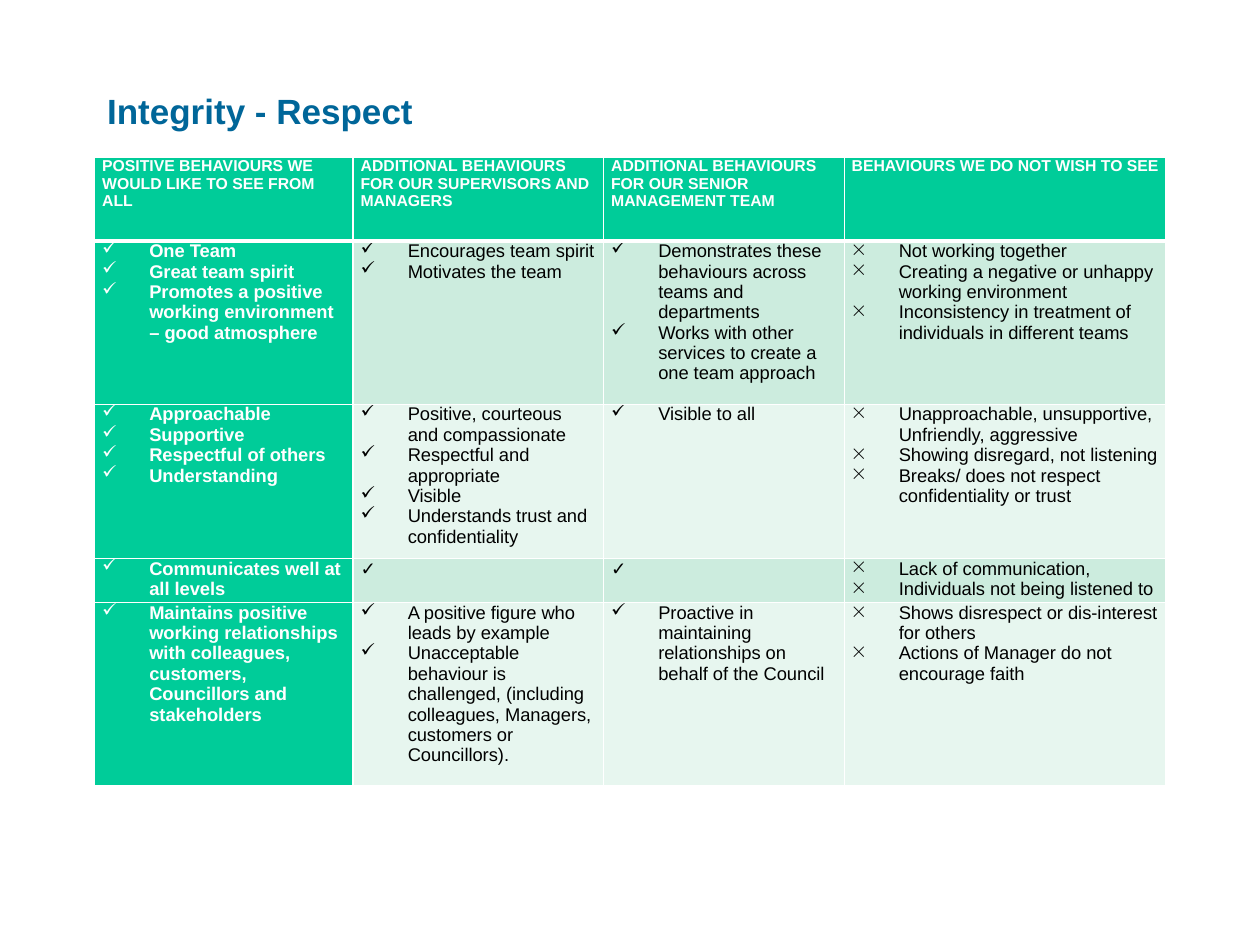
from lxml import etree
from pptx import Presentation
from pptx.dml.color import RGBColor
from pptx.enum.text import MSO_ANCHOR
from pptx.oxml.ns import qn
from pptx.util import Cm, Pt

MIDDLE = MSO_ANCHOR.MIDDLE
BLUE = RGBColor(0x00, 0x66, 0x99)
GREEN = RGBColor(0x00, 0xCC, 0x99)
MINT = RGBColor(0xCC, 0xEC, 0xDE)
PALE_MINT = RGBColor(0xE7, 0xF6, 0xEF)
WHITE = RGBColor(0xFF, 0xFF, 0xFF)
BLACK = RGBColor(0x00, 0x00, 0x00)

TICK, CROSS = "✓", "×"
COLUMN_BULLETS = [TICK, TICK, TICK, CROSS]
COLUMN_WIDTHS = [5.21, 5.05, 4.85, 6.48]
ROW_HEIGHTS = [1.69, 3.29, 2.98, 0.88, 3.7]
HEADINGS = [
    "POSITIVE BEHAVIOURS WE WOULD LIKE TO SEE FROM ALL",
    "ADDITIONAL BEHAVIOURS FOR OUR SUPERVISORS AND MANAGERS",
    "ADDITIONAL BEHAVIOURS FOR OUR SENIOR MANAGEMENT TEAM",
    "BEHAVIOURS WE DO NOT WISH TO SEE",
]
BEHAVIOURS = [
    [
        ["One Team", "Great team spirit",
         "Promotes a positive working environment – good atmosphere"],
        ["Encourages team spirit", "Motivates the team"],
        ["Demonstrates these behaviours across teams and departments",
         "Works with other services to create a one team approach"],
        ["Not working together",
         "Creating a negative or unhappy working environment",
         "Inconsistency in treatment of individuals in different teams"],
    ],
    [
        ["Approachable", "Supportive", "Respectful of others", "Understanding"],
        ["Positive, courteous and compassionate", "Respectful and appropriate",
         "Visible", "Understands trust and confidentiality"],
        ["Visible to all"],
        ["Unapproachable, unsupportive, Unfriendly, aggressive",
         "Showing disregard, not listening",
         "Breaks/ does not respect confidentiality or trust"],
    ],
    [
        ["Communicates well at all levels"],
        [],
        [],
        ["Lack of communication,", "Individuals not being listened to"],
    ],
    [
        ["Maintains positive working relationships with colleagues, customers, "
         "Councillors and stakeholders"],
        ["A positive figure who leads by example",
         "Unacceptable behaviour is challenged, (including colleagues, Managers, "
         "customers or Councillors)."],
        ["Proactive in maintaining relationships on behalf of the Council"],
        ["Shows disrespect or dis-interest for others",
         "Actions of Manager do not encourage faith"],
    ],
]


def write_text(text_frame, lines, size, color, bold=False, bullet=None):
    """Write one paragraph per line, with a hanging bullet if one is given."""
    text_frame.word_wrap = True
    for index, line in enumerate(lines):
        paragraph = text_frame.paragraphs[0] if index == 0 else text_frame.add_paragraph()
        if bullet:
            properties = paragraph._p.get_or_add_pPr()
            properties.set("marL", str(Cm(0.95)))
            properties.set("indent", str(-Cm(0.95)))
            etree.SubElement(properties, qn("a:buChar"), char=bullet)
        run = paragraph.add_run()
        run.text = line
        run.font.name = "Arial"
        run.font.size = Pt(size)
        run.font.bold = bold
        run.font.color.rgb = color


def format_cell(cell, fill, top, bottom):
    """Set margins, white borders and fill; top and bottom are widths in points."""
    cell.margin_left = cell.margin_right = Cm(0.15)
    cell.margin_top = cell.margin_bottom = 0
    properties = cell._tc.get_or_add_tcPr()
    for side, width in (("L", 1), ("R", 1), ("T", top), ("B", bottom)):
        line = etree.SubElement(properties, qn(f"a:ln{side}"), w=str(Pt(width)))
        line_fill = etree.SubElement(line, qn("a:solidFill"))
        etree.SubElement(line_fill, qn("a:srgbClr"), val=str(WHITE))
    cell.fill.solid()
    cell.fill.fore_color.rgb = fill


presentation = Presentation()
presentation.slide_width = Cm(25.4)
presentation.slide_height = Cm(19.05)
slide = presentation.slides.add_slide(presentation.slide_layouts[6])

title = slide.shapes.add_textbox(Cm(1.91), Cm(1.27), Cm(21.59), Cm(1.91))
title.text_frame.vertical_anchor = MIDDLE
write_text(title.text_frame, ["Integrity - Respect"], 20, BLUE, bold=True)

table = slide.shapes.add_table(
    len(ROW_HEIGHTS), len(COLUMN_WIDTHS), Cm(1.91), Cm(3.17),
    Cm(sum(COLUMN_WIDTHS)), Cm(sum(ROW_HEIGHTS))).table
for column, width in zip(table.columns, COLUMN_WIDTHS):
    column.width = Cm(width)
for row, height in zip(table.rows, ROW_HEIGHTS):
    row.height = Cm(height)

for column_index, heading in enumerate(HEADINGS):
    cell = table.cell(0, column_index)
    format_cell(cell, GREEN, top=1, bottom=3)
    write_text(cell.text_frame, [heading], 9, WHITE, bold=True)

for row_index, behaviour_row in enumerate(BEHAVIOURS, start=1):
    band = MINT if row_index % 2 else PALE_MINT
    for column_index, lines in enumerate(behaviour_row):
        cell = table.cell(row_index, column_index)
        first = column_index == 0
        format_cell(cell, GREEN if first else band,
                    top=3 if row_index == 1 else 1, bottom=1)
        # A cell without behaviours shows only its tick.
        write_text(cell.text_frame, lines or [TICK], 10.5,
                   WHITE if first else BLACK, bold=first,
                   bullet=COLUMN_BULLETS[column_index] if lines else None)

presentation.save("out.pptx")
